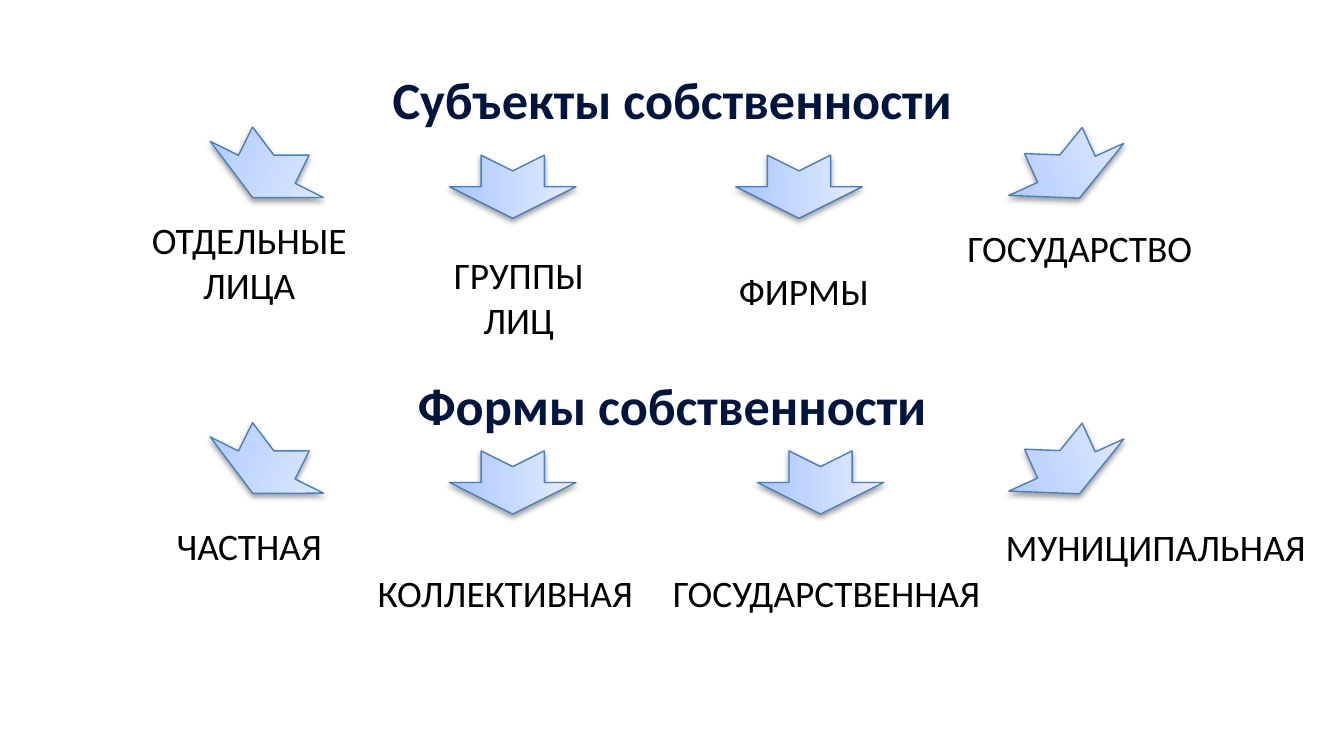
import pptx
import pptx.dml.color
import pptx.enum.shapes
import pptx.enum.text
import pptx.oxml
import pptx.util
from pptx.util import Inches

WIDTH = 10
HEIGHT = WIDTH * 9 / 16
FONT = "Calibri"
NAVY, BLACK, EDGE = "00153E", "000000", "4B7EBC"
STOPS = [(0, "A4C4FF"), (35, "BFD4FF"), (100, "E6EEFF")]
ARROW = (0.47, 0.94)
HEAD = (2.64, 4.72, 0.57)  # left, width, height
TURNS = [116.4, 90, 90, 65.6]
DROPS = [0, 0.13, 0.13, 0]  # arrow top below the top of its row

# Label: text, left, top, width, height; then the left of its arrow
PARTS = [
    {
        "head": "Субъекты собственности", "top": 0.45, "row": 0.79,
        "items": [
            ("ОТДЕЛЬНЫЕ ЛИЦА", 0.83, 1.57, 2.05, 0.77, 1.75),
            ("ГРУППЫ ЛИЦ", 3.19, 1.83, 1.34, 0.77, 3.58),
            ("ФИРМЫ", 5.39, 1.95, 1.18, 0.44, 5.71),
            ("ГОСУДАРСТВО", 6.97, 1.63, 2.13, 0.44, 7.7),
        ],
    },
    {
        "head": "Формы собственности", "top": 2.73, "row": 2.99,
        "items": [
            ("ЧАСТНАЯ", 0.83, 3.84, 2.05, 0.44, 1.75),
            ("КОЛЛЕКТИВНАЯ", 2.68, 4.19, 2.16, 0.44, 3.58),
            ("ГОСУДАРСТВЕННАЯ", 4.84, 4.19, 2.62, 0.44, 5.87),
            ("МУНИЦИПАЛЬНАЯ", 7.36, 3.85, 2.48, 0.44, 7.7),
        ],
    },
]

NS = 'xmlns:a="http://schemas.openxmlformats.org/drawingml/2006/main"'
GRAD = (
    f'<a:gradFill {NS} rotWithShape="1"><a:gsLst>'
    + "".join(f'<a:gs pos="{pos * 1000}"><a:srgbClr val="{tint}"/></a:gs>'
              for pos, tint in STOPS)
    + '</a:gsLst><a:lin ang="16200000" scaled="1"/></a:gradFill>'
)
SHADE = (
    f'<a:effectLst {NS}><a:outerShdw blurRad="40000" dist="20000" dir="5400000"'
    ' rotWithShape="0"><a:srgbClr val="000000"><a:alpha val="38000"/>'
    '</a:srgbClr></a:outerShdw></a:effectLst>'
)


def color(code):
    return pptx.dml.color.RGBColor.from_string(code)


def write(shape, text, size, tint, bold=False):
    frame = shape.text_frame
    frame.word_wrap = True
    frame.auto_size = pptx.enum.text.MSO_AUTO_SIZE.SHAPE_TO_FIT_TEXT
    frame.vertical_anchor = pptx.enum.text.MSO_ANCHOR.TOP
    para = frame.paragraphs[0]
    para.alignment = pptx.enum.text.PP_ALIGN.CENTER
    run = para.add_run()
    run.text = text
    run.font.name = FONT
    run.font.size = pptx.util.Pt(size)
    run.font.bold = bold
    run.font.color.rgb = color(tint)


def arrow(slide, left, top, turn):
    kind = pptx.enum.shapes.MSO_SHAPE.NOTCHED_RIGHT_ARROW
    shape = slide.shapes.add_shape(
        kind, *map(Inches, (left, top, *ARROW)))
    shape.rotation = turn
    shape.line.color.rgb = color(EDGE)
    shape.line.width = pptx.util.Pt(0.75)
    props = shape.element.spPr
    props.find("{*}prstGeom").addnext(pptx.oxml.parse_xml(GRAD))
    props.append(pptx.oxml.parse_xml(SHADE))


def main():
    deck = pptx.Presentation()
    deck.slide_width, deck.slide_height = Inches(WIDTH), Inches(HEIGHT)
    slide = deck.slides.add_slide(deck.slide_layouts[5])
    for part in PARTS:
        left, width, height = HEAD
        place = [Inches(n) for n in (left, part["top"], width, height)]
        if part is PARTS[0]:
            head = slide.shapes.title
            head.left, head.top, head.width, head.height = place
        else:
            head = slide.shapes.add_textbox(*place)
        write(head, part["head"], 28, NAVY, True)
        for item, turn, drop in zip(part["items"], TURNS, DROPS):
            text, *area, spot = item
            arrow(slide, spot, part["row"] + drop, turn)
            label = slide.shapes.add_textbox(*map(Inches, area))
            write(label, text, 20, BLACK)
    deck.save("out.pptx")


if __name__ == "__main__":
    main()
